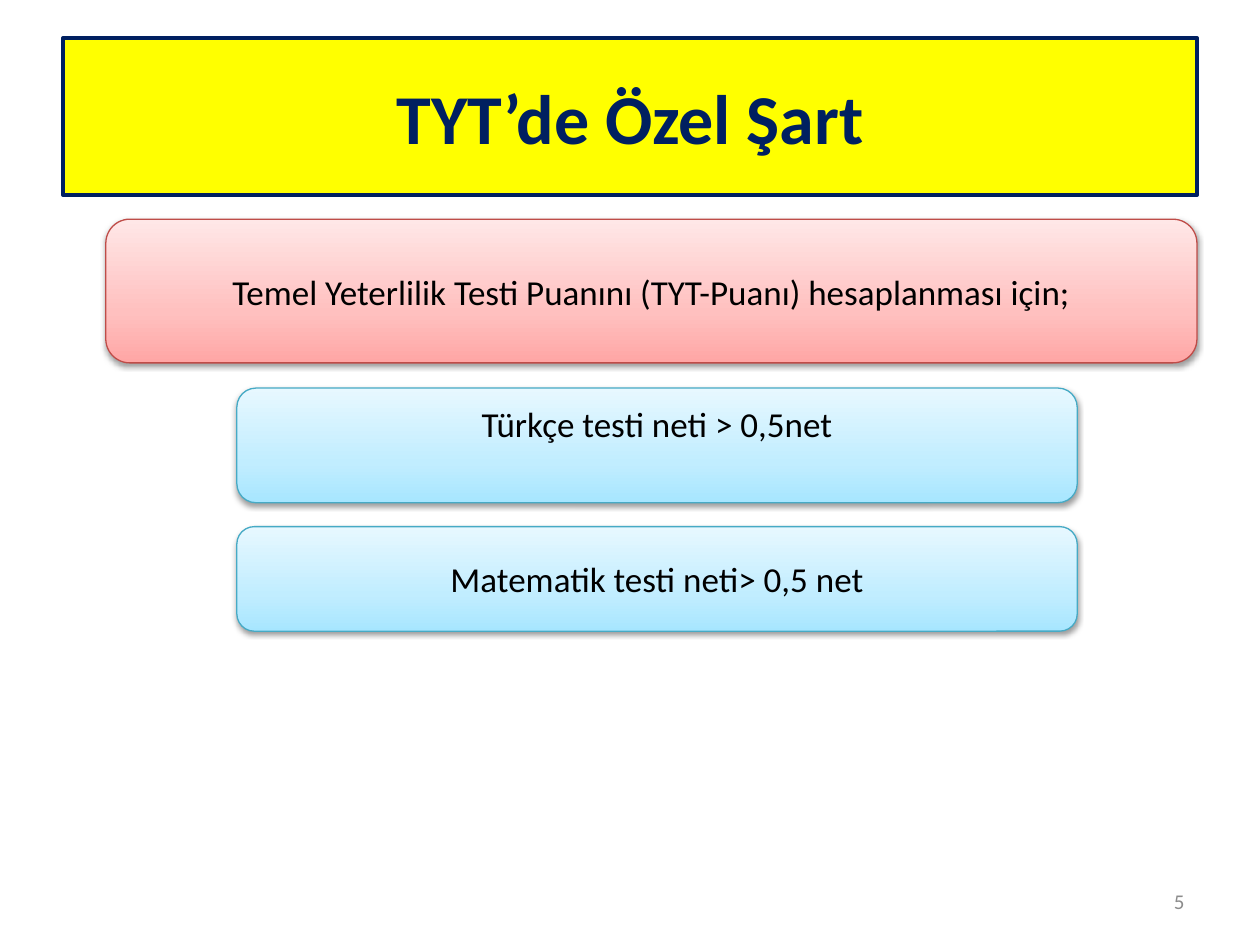
from lxml.etree import SubElement
from pptx import Presentation
from pptx.dml.color import RGBColor
from pptx.enum.shapes import MSO_SHAPE as Shape
from pptx.enum.text import MSO_ANCHOR as Anchor, PP_ALIGN as Align
from pptx.oxml.ns import qn
from pptx.util import Inches, Pt

NAVY, YELLOW, BLACK, GREY = "002060", "FFFF00", "000000", "8C8C8C"
RED_STOPS = [(0, "FFA6A5"), (35, "FFC0BF"), (100, "FFE7E7")]
BLUE_STOPS = [(0, "A7E6FF"), (35, "C1EDFF"), (100, "E7F8FF")]
RED_LINE, BLUE_LINE = "BF4C48", "46AAC5"


def color(value):
    return RGBColor.from_string(value)


def write_text(shape, text, size=20, text_color=BLACK, bold=False,
               align=Align.CENTER, bottom=0.05):
    frame = shape.text_frame
    frame.word_wrap = True
    frame.vertical_anchor = Anchor.MIDDLE
    frame.margin_bottom = Inches(bottom)
    paragraph = frame.paragraphs[0]
    paragraph.alignment = align
    run = paragraph.add_run()
    run.text = text
    run.font.name = "Calibri"
    run.font.size = Pt(size)
    run.font.bold = bold
    run.font.color.rgb = color(text_color)


def set_line(shape, line_color, width):
    shape.line.color.rgb = color(line_color)
    shape.line.width = Pt(width)


def set_gradient(shape, stops):
    """Fill from bottom to top with (percent, colour) stops."""
    shape.fill.gradient()
    shape.fill.gradient_angle = 90
    stop_list = shape._element.spPr.find(qn("a:gradFill")).find(qn("a:gsLst"))
    stop_list.clear()
    for percent, value in stops:
        stop = SubElement(stop_list, qn("a:gs"), pos=str(percent * 1000))
        SubElement(stop, qn("a:srgbClr"), val=value)


def set_shadow(shape):
    shape.shadow.inherit = False
    effects = shape._element.spPr.find(qn("a:effectLst"))
    shadow = SubElement(effects, qn("a:outerShdw"), blurRad=str(Pt(3.1)),
                        dist=str(Pt(1.6)), dir="5400000", rotWithShape="0")
    shade = SubElement(shadow, qn("a:srgbClr"), val=BLACK)
    SubElement(shade, qn("a:alpha"), val="38000")


def place_title(slide, box, text):
    title = slide.shapes.title
    title.left, title.top, title.width, title.height = map(Inches, box)
    title.fill.solid()
    title.fill.fore_color.rgb = color(YELLOW)
    set_line(title, NAVY, 2)
    write_text(title, text, size=40, text_color=NAVY, bold=True)


def add_card(slide, box, text, stops, line_color, **text_format):
    card = slide.shapes.add_shape(Shape.ROUNDED_RECTANGLE, *map(Inches, box))
    set_gradient(card, stops)
    set_line(card, line_color, 0.75)
    set_shadow(card)
    write_text(card, text, **text_format)


def add_page_number(slide, box, number):
    text_box = slide.shapes.add_textbox(*map(Inches, box))
    write_text(text_box, number, size=12, text_color=GREY, align=Align.RIGHT)


def main():
    presentation = Presentation()
    presentation.slide_width, presentation.slide_height = Inches(10), Inches(7.5)
    slide = presentation.slides.add_slide(presentation.slide_layouts[5])

    # Title and condition heading
    place_title(slide, (0.5, 0.3, 9, 1.25), "TYT’de Özel Şart")
    add_card(slide, (0.84, 1.74, 8.66, 1.14),
             "Temel Yeterlilik Testi Puanını (TYT-Puanı) hesaplanması için;",
             RED_STOPS, RED_LINE)

    # Required test scores; the first sits one line above centre
    left, width = 1.88, 6.67
    for top, height, text, bottom in [
        (3.08, 0.91, "Türkçe testi neti > 0,5net", 0.39),
        (4.18, 0.83, "Matematik testi neti> 0,5 net", 0.05),
    ]:
        add_card(slide, (left, top, width, height), text,
                 BLUE_STOPS, BLUE_LINE, bottom=bottom)

    # Footer
    add_page_number(slide, (7.17, 6.95, 2.33, 0.4), "5")
    presentation.save("out.pptx")


if __name__ == "__main__":
    main()
